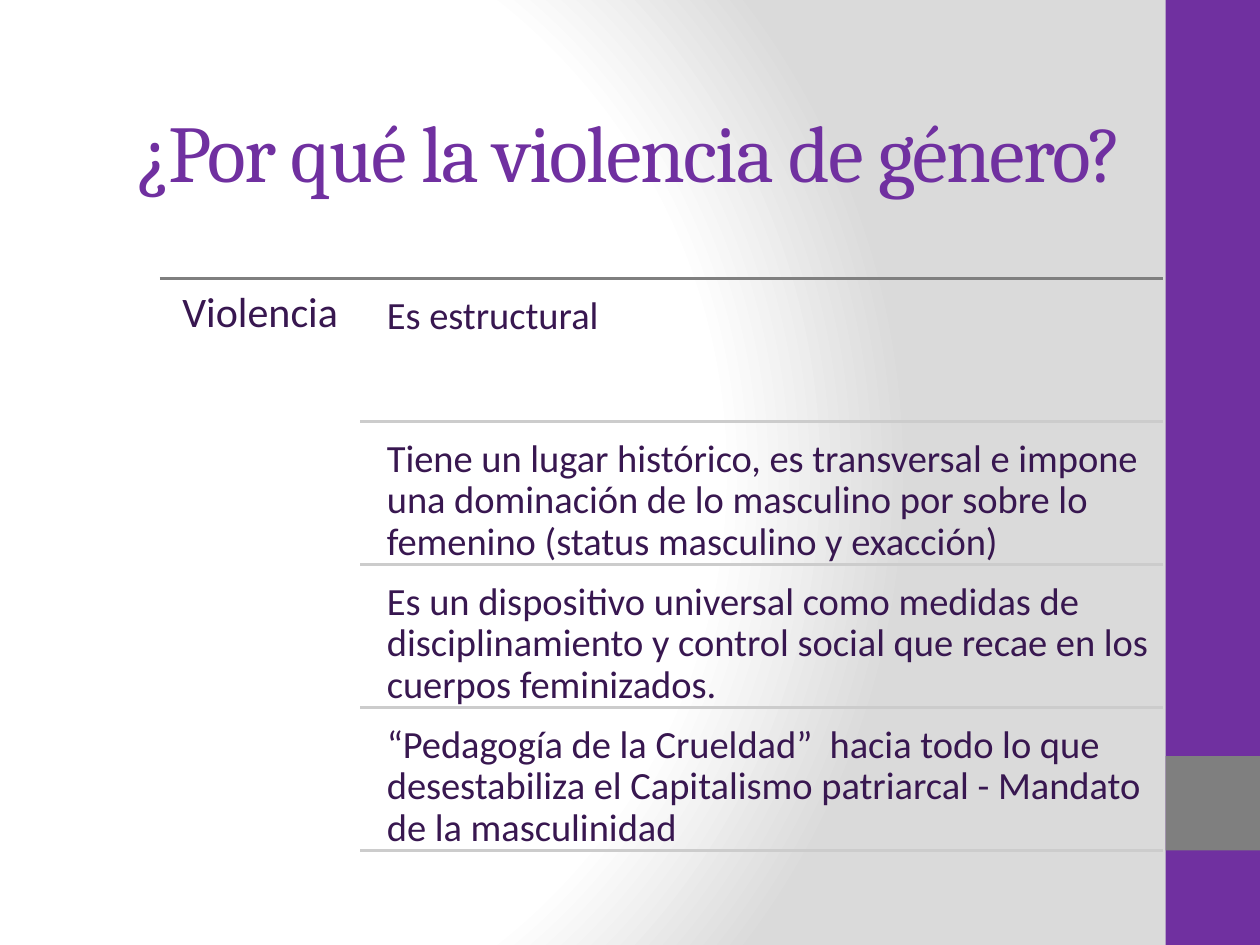
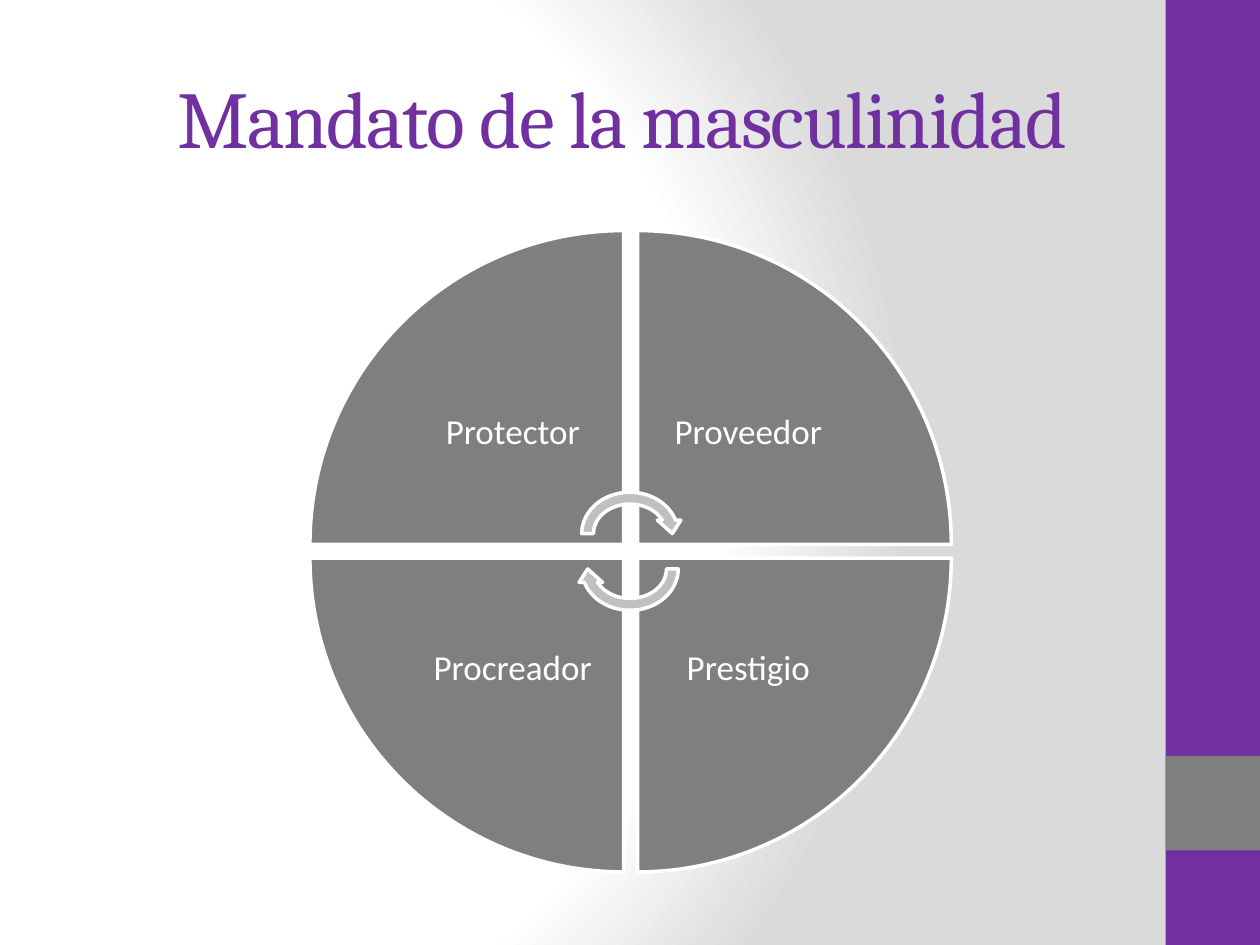
from lxml import etree
from pptx import Presentation
from pptx.dml.color import RGBColor
from pptx.enum.shapes import MSO_CONNECTOR, MSO_SHAPE
from pptx.enum.text import MSO_ANCHOR, MSO_AUTO_SIZE, PP_ALIGN
from pptx.oxml import parse_xml
from pptx.oxml.ns import nsdecls, qn
from pptx.util import Inches, Pt

PURPLE = RGBColor(0x70, 0x30, 0xA0)
DARK_PURPLE = RGBColor(0x38, 0x17, 0x50)
GREY = RGBColor(0x7F, 0x7F, 0x7F)
SILVER = RGBColor(0xC0, 0xC0, 0xC0)
LIGHT_GREY = RGBColor(0xCC, 0xCC, 0xCC)
WHITE = RGBColor(0xFF, 0xFF, 0xFF)

BACKGROUND = f"""<p:bg {nsdecls("p", "a")}><p:bgPr>
  <a:gradFill rotWithShape="1"><a:gsLst>
    <a:gs pos="0"><a:srgbClr val="FFFFFF"/></a:gs>
    <a:gs pos="75000"><a:srgbClr val="FFFFFF"/></a:gs>
    <a:gs pos="100000"><a:srgbClr val="DADADA"/></a:gs>
  </a:gsLst><a:path path="circle">
    <a:fillToRect l="20000" t="50000" r="100000" b="50000"/>
  </a:path></a:gradFill><a:effectLst/>
</p:bgPr></p:bg>"""


def add_filled_shape(slide, kind, box, fill, line=None):
    shape = slide.shapes.add_shape(kind, *map(Inches, box))
    shape.shadow.inherit = False
    shape.fill.solid()
    shape.fill.fore_color.rgb = fill
    if line is None:
        shape.line.fill.background()
    else:
        shape.line.color.rgb = line
        shape.line.width = Pt(2)
    return shape


def write_text(shape, text, size, color, align, anchor, margin=None, font="Calibri"):
    frame = shape.text_frame
    frame_format = {"word_wrap": True, "auto_size": MSO_AUTO_SIZE.NONE, "vertical_anchor": anchor}
    if margin is not None:
        for side in ("left", "top", "right", "bottom"):
            frame_format[f"margin_{side}"] = Inches(margin)
    for name, value in frame_format.items():
        setattr(frame, name, value)
    paragraph = frame.paragraphs[0]
    paragraph.alignment = align
    paragraph.line_spacing = 0.9 if font == "Calibri" else 1.0
    run = paragraph.add_run()
    run.text = text
    for name, value in {"name": font, "size": Pt(size)}.items():
        setattr(run.font, name, value)
    run.font.color.rgb = color
    return run


presentation = Presentation()
presentation.slide_width, presentation.slide_height = Inches(10), Inches(7.5)
layout = presentation.slide_layouts[5]

# Titles of both slides
slides = []
for title_text, left, top, align in (
    ("¿Por qué la violencia de género?", 0.98, 0.31, PP_ALIGN.LEFT),
    ("Mandato de la masculinidad ", 0.88, 0.04, PP_ALIGN.CENTER),
):
    slide = presentation.slides.add_slide(layout)
    title = slide.shapes.title
    title.left, title.top = Inches(left), Inches(top)
    title.width, title.height = Inches(8.25), Inches(1.76)
    run = write_text(title, title_text, 46, PURPLE, align, MSO_ANCHOR.MIDDLE, font="Cambria")
    run.font._element.set("spc", "-100")
    slides.append(slide)
violence_slide, mandate_slide = slides

# Background and side bands, moved to the layout that both slides share
layout._element.cSld.insert(0, parse_xml(BACKGROUND))
for position, (top, height, color) in enumerate(((0, 7.5, PURPLE), (6, 0.75, GREY))):
    band = add_filled_shape(violence_slide, MSO_SHAPE.RECTANGLE, (9.25, top, 0.75, height), color)
    layout.shapes._spTree.insert(2 + position, band._element)

# Slide 1: heading on the left, ruled rows on the right
statements = (
    "Es estructural",
    "Tiene un lugar histórico, es transversal e impone una dominación de lo masculino "
    "por sobre lo femenino (status masculino y exacción)",
    "Es un dispositivo universal como medidas de disciplinamiento y control social "
    "que recae en los cuerpos feminizados.",
    "“Pedagogía de la Crueldad”  hacia todo lo que desestabiliza el Capitalismo "
    "patriarcal - Mandato de la masculinidad",
)
LIST_TOP, LIST_BOTTOM, LIST_RIGHT = 2.21, 6.75, 9.23
row_height = (LIST_BOTTOM - LIST_TOP) / len(statements)

for row in range(len(statements) + 1):
    left, color = (1.27, GREY) if row == 0 else (2.86, LIGHT_GREY)
    y = Inches(LIST_TOP + row * row_height)
    rule = violence_slide.shapes.add_connector(
        MSO_CONNECTOR.STRAIGHT, Inches(left), y, Inches(LIST_RIGHT), y)
    rule.line.color.rgb = color
    rule.line.width = Pt(2)
    etree.SubElement(rule._element.spPr, qn("a:effectLst"))

heading = violence_slide.shapes.add_textbox(*map(Inches, (1.27, LIST_TOP, 1.59, 5.73)))
write_text(heading, "Violencia", 24, DARK_PURPLE, PP_ALIGN.CENTER, MSO_ANCHOR.TOP, 0.1)
for row, statement in enumerate(statements):
    top = LIST_TOP + 0.05 + row * row_height
    box = violence_slide.shapes.add_textbox(*map(Inches, (2.98, top, 6.25, 1.08)))
    write_text(box, statement, 22, DARK_PURPLE, PP_ALIGN.LEFT, MSO_ANCHOR.TOP, 0.09)

# Slide 2: four wedges, clockwise from the top left
WEDGE, LABEL = 2.49, 1.76
for quarter, (mandate, column, row) in enumerate((
    ("Protector", 0, 0), ("Proveedor", 1, 0), ("Prestigio", 1, 1), ("Procreador", 0, 1),
)):
    left, top = 2.46 + 2.6 * column, 1.83 + 2.6 * row
    wedge = add_filled_shape(
        mandate_slide, MSO_SHAPE.PIE_WEDGE, (left, top, WEDGE, WEDGE), GREY, WHITE)
    wedge.rotation = 90 * quarter
    label_left = left + (1 - column) * (WEDGE - LABEL)
    label_top = top + (1 - row) * (WEDGE - LABEL)
    label = mandate_slide.shapes.add_textbox(*map(Inches, (label_left, label_top, LABEL, LABEL)))
    write_text(label, mandate, 20, WHITE, PP_ALIGN.CENTER, MSO_ANCHOR.MIDDLE, 0.16)

# Circular arrows at the centre
for top, rotation in ((3.86, 0), (4.14, 180)):
    arrow = add_filled_shape(
        mandate_slide, MSO_SHAPE.CIRCULAR_ARROW, (4.57, top, 0.86, 0.75), SILVER, WHITE)
    arrow.rotation = rotation

presentation.save("out.pptx")
